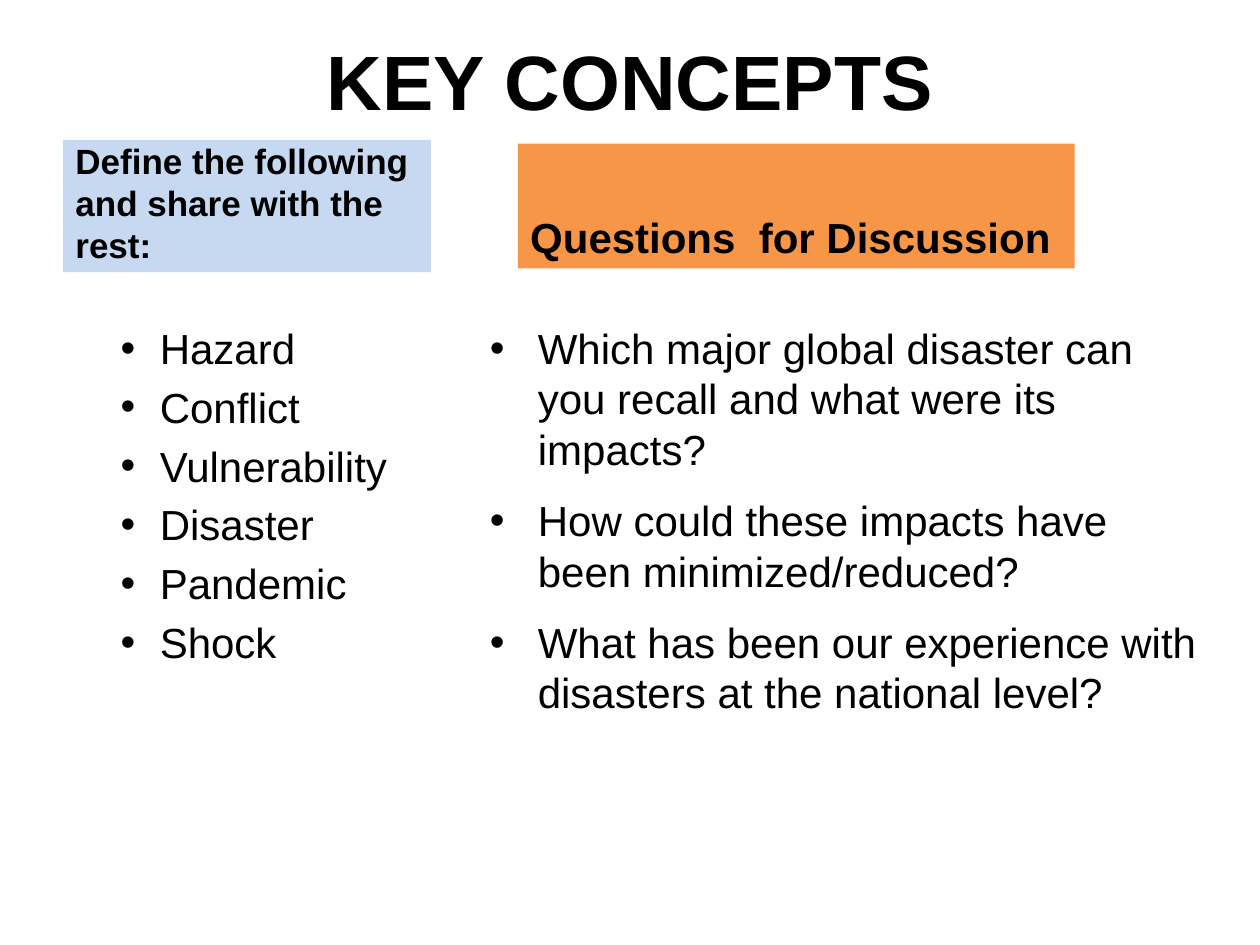
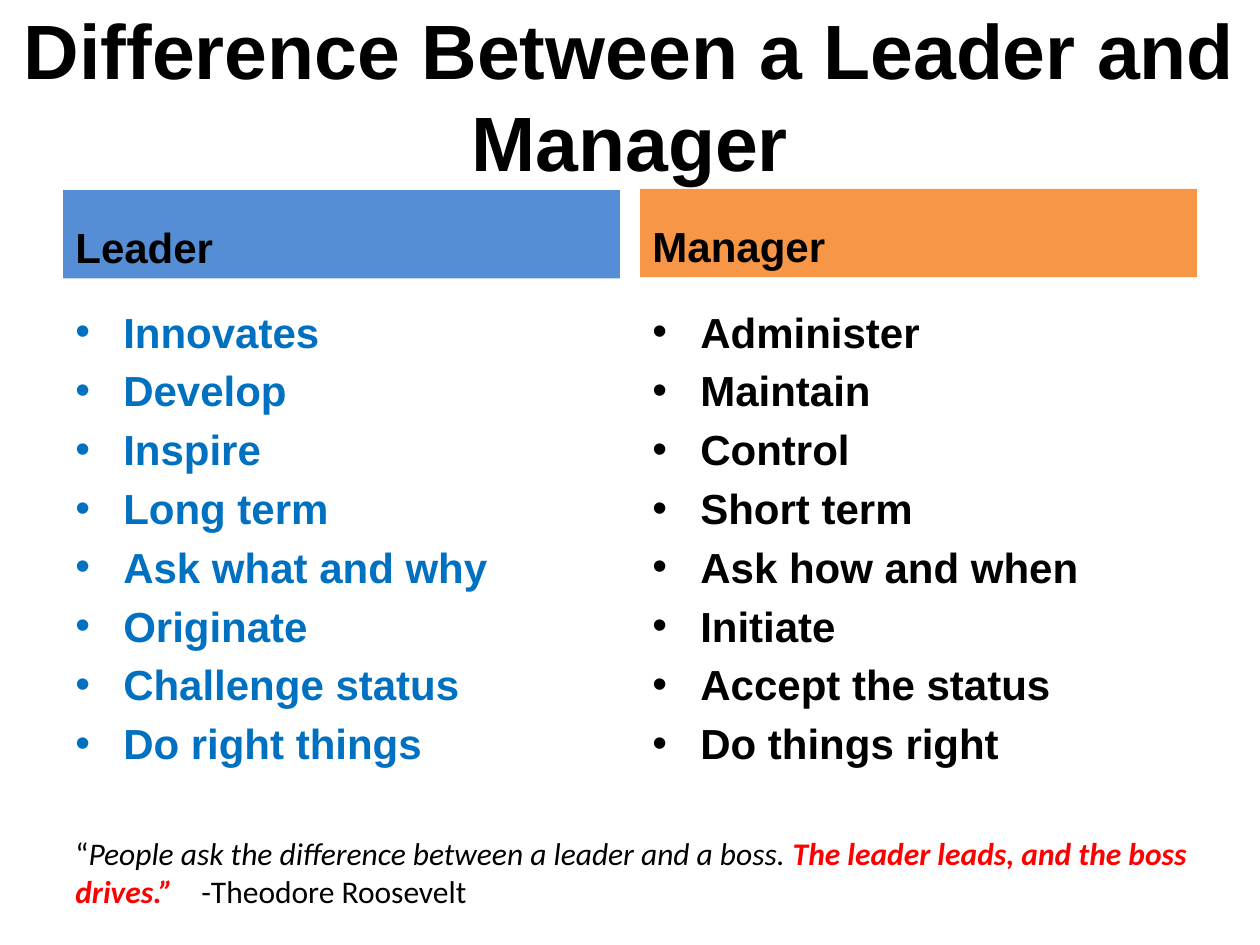
from lxml.etree import SubElement
from pptx import Presentation
from pptx.dml.color import RGBColor as RGB
from pptx.enum.shapes import MSO_SHAPE as Preset
from pptx.enum.text import MSO_ANCHOR as Anchor, PP_ALIGN as Align
from pptx.oxml.ns import qn
from pptx.util import Inches, Pt

COLORS = {
    "text": "000000",
    "pale": "C6D9F1",
    "leader": "558ED5",
    "accent": "F79646",
    "leader_text": "0070C0",
    "alert": "FF0000",
}
BODY = {"name": "Arial", "size": Pt(24), "bold": False}
STRONG = {**BODY, "bold": True}
TITLE = {**STRONG, "size": Pt(44)}
QUOTE = {"name": "Calibri", "size": Pt(18), "bold": False, "italic": False}
TIGHT = {"space_before": Pt(4.8)}
AIRY = {"space_before": Pt(6), "space_after": Pt(6)}
COLUMN_WIDTH = 4.42


def apply_format(target, values):
    """Set every attribute named in values on target."""
    for key, value in values.items():
        setattr(target, key, value)


def add_words(paragraph, words, font, color="text"):
    """Append a formatted run to a paragraph."""
    run = paragraph.add_run()
    run.text = words
    apply_format(run.font, font)
    run.font.color.rgb = RGB.from_string(COLORS[color])


def add_frame(slide, box, anchor=Anchor.TOP):
    """Add a wrapping text box and return its text frame."""
    frame = slide.shapes.add_textbox(*map(Inches, box)).text_frame
    apply_format(frame, {"word_wrap": True, "vertical_anchor": anchor})
    return frame


def add_title(slide, box, words):
    """Add a centred slide title."""
    heading = add_frame(slide, box, Anchor.MIDDLE).paragraphs[0]
    heading.alignment = Align.CENTER
    add_words(heading, words, TITLE)


def add_band(slide, box, words, fill, size=24):
    """Add a filled column heading with its text at the bottom."""
    band = slide.shapes.add_shape(Preset.RECTANGLE, *map(Inches, box))
    band.shadow.inherit = False
    band.fill.solid()
    band.fill.fore_color.rgb = RGB.from_string(COLORS[fill])
    band.line.fill.background()
    frame = band.text_frame
    apply_format(frame, {"word_wrap": True, "vertical_anchor": Anchor.BOTTOM})
    label = frame.paragraphs[0]
    apply_format(label, {"alignment": Align.LEFT, **TIGHT})
    add_words(label, words, {**STRONG, "size": Pt(size)})


def add_bullets(slide, box, items, font=BODY, color="text", spacing=TIGHT,
                margin=0.38, hang=0.38):
    """Add a bulleted list with a hanging indent."""
    frame = add_frame(slide, box)
    for index, item in enumerate(items):
        entry = frame.add_paragraph() if index else frame.paragraphs[0]
        apply_format(entry, spacing)
        properties = entry._p.get_or_add_pPr()
        properties.set("marL", str(Inches(margin)))
        properties.set("indent", str(-Inches(hang)))
        SubElement(properties, qn("a:buFont")).set("typeface", "Arial")
        SubElement(properties, qn("a:buChar")).set("char", "•")
        add_words(entry, item, font, color)


def add_quote(slide, box, parts):
    """Add a quotation made of differently styled parts."""
    quotation = add_frame(slide, box).paragraphs[0]
    for words, emphasis, color in parts:
        add_words(quotation, words, {**QUOTE, **emphasis}, color)


def build_key_concepts(slide):
    """Build the slide of terms and discussion questions."""
    add_title(slide, (0.5, 0.3, 9, 0.67), "KEY CONCEPTS")
    add_band(slide, (0.5, 1.11, 2.92, 1.05),
             "Define the following and share with the rest:", "pale", 20)
    add_bullets(slide, (0.36, 2.51, COLUMN_WIDTH, 4.32),
                ["Hazard", "Conflict", "Vulnerability", "Disaster", "Pandemic",
                 "Shock"], margin=0.81, hang=0.31)
    add_band(slide, (4.11, 1.14, COLUMN_WIDTH, 0.99),
             "Questions  for Discussion", "accent")
    add_bullets(slide, (3.79, 2.51, 5.85, 3.15), [
        "Which major global disaster can you recall and what were its impacts?",
        "How could these impacts have been minimized/reduced?",
        "What has been our experience with disasters at the national level?",
    ], spacing=AIRY)


def build_comparison(slide):
    """Build the slide comparing leaders and managers."""
    add_title(slide, (0, 0, 10, 1.5), "Difference Between a Leader and Manager")
    roles = [
        ("Leader", 0.5, 1.51, "leader", "leader_text",
         ["Innovates", "Develop", "Inspire", "Long term", "Ask what and why",
          "Originate", "Challenge status", "Do right things"]),
        ("Manager", 5.08, 1.5, "accent", "text",
         ["Administer", "Maintain", "Control", "Short term", "Ask how and when",
          "Initiate", "Accept the status", "Do things right"]),
    ]
    for role, left, top, fill, color, traits in roles:
        add_band(slide, (left, top, COLUMN_WIDTH, 0.7), role, fill)
        add_bullets(slide, (left, 2.38, COLUMN_WIDTH, 4.32), traits, STRONG, color)
    add_quote(slide, (0.5, 6.57, 9.5, 0.71), [
        ("“", {}, "text"),
        ("People ask the difference between a leader and a boss. ",
         {"italic": True}, "text"),
        ("The leader leads, and the boss drives.”",
         {"italic": True, "bold": True}, "alert"),
        ("\t-Theodore Roosevelt", {}, "text"),
    ])


def main():
    """Build and save the presentation."""
    deck = Presentation()
    apply_format(deck, {"slide_width": Inches(10), "slide_height": Inches(7.5)})
    for build in (build_key_concepts, build_comparison):
        build(deck.slides.add_slide(deck.slide_layouts[6]))
    deck.save("out.pptx")


if __name__ == "__main__":
    main()
